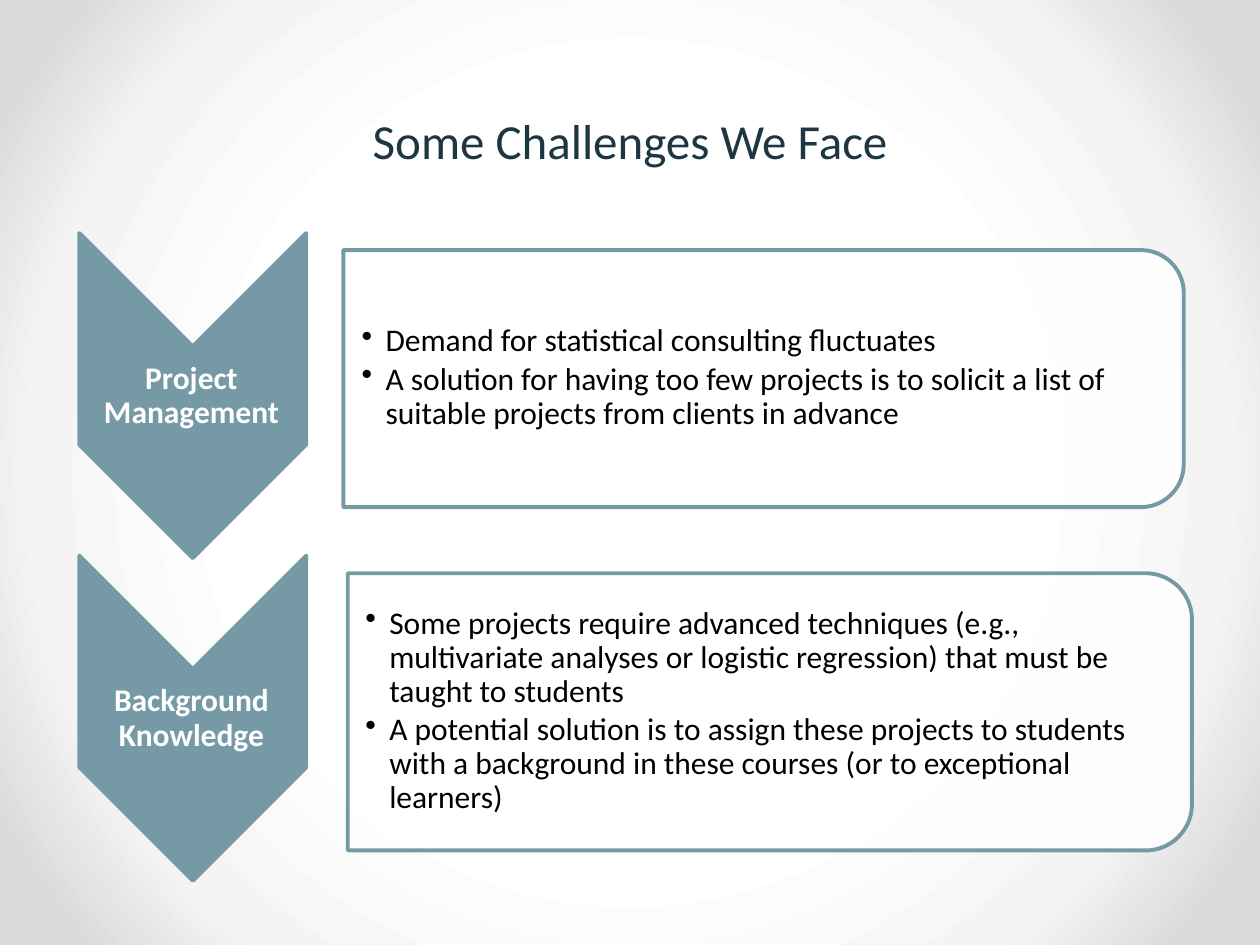
"""Build the slide on challenges in project management and background knowledge."""
from lxml import etree
from pptx import Presentation
from pptx.dml.color import RGBColor
from pptx.enum.shapes import MSO_SHAPE
from pptx.enum.text import MSO_ANCHOR, PP_ALIGN
from pptx.oxml import parse_xml
from pptx.oxml.ns import qn
from pptx.util import Inches, Pt

CHEVRON = MSO_SHAPE.CHEVRON
ROUNDED_TOP = MSO_SHAPE.ROUND_2_SAME_RECTANGLE
MIDDLE = MSO_ANCHOR.MIDDLE
TOP = MSO_ANCHOR.TOP
CENTER = PP_ALIGN.CENTER
LEFT = PP_ALIGN.LEFT
TEAL = "759AA5"
WHITE = "FFFFFF"
NAVY = "1D3641"
BLACK = "000000"
DRAWING_NS = "http://schemas.openxmlformats.org/drawingml/2006/main"


def rgb(value):
    return RGBColor.from_string(value)


def add_text(box, lines, size, color, align, after=0, bold=False, bullet=False, spacing=0.9):
    frame = slide.shapes.add_textbox(*[Inches(v) for v in box]).text_frame
    frame.word_wrap = True
    frame.vertical_anchor = MIDDLE if after else TOP
    if after:
        frame.margin_left = Inches(0.14 if bullet else 0.01)
        frame.margin_top = frame.margin_right = frame.margin_bottom = Inches(0.01)
    for index, line in enumerate(lines):
        paragraph = frame.paragraphs[0] if index == 0 else frame.add_paragraph()
        paragraph.alignment = align
        paragraph.line_spacing = spacing
        paragraph.space_after = Pt(after)
        if bullet:
            paragraph.level = 1
            properties = paragraph._p.get_or_add_pPr()
            properties.set("marL", str(Inches(0.19)))
            properties.set("indent", str(Inches(-0.19)))
            etree.SubElement(properties, qn("a:buChar")).set("char", "•")
        run = paragraph.add_run()
        run.text = line
        run.font.name = "Calibri"
        run.font.size = Pt(size)
        run.font.bold = bold
        run.font.color.rgb = rgb(color)


prs = Presentation()
prs.slide_width = Inches(10)
prs.slide_height = Inches(7.5)
slide = prs.slides.add_slide(prs.slide_layouts[6])

slide.background.fill.gradient()
linear = slide.background._cSld.find(".//" + qn("a:gradFill"))
stops = "".join(
    f'<a:gs pos="{position}000"><a:srgbClr val="{color}"/></a:gs>'
    for position, color in [(50, WHITE), (76, "F4F4F4"), (92, "DADADA")]
)
radial = parse_xml(
    f'<a:gradFill xmlns:a="{DRAWING_NS}" rotWithShape="1"><a:gsLst>{stops}</a:gsLst>'
    '<a:path path="circle"><a:fillToRect l="50000" t="50000" r="50000" b="50000"/>'
    "</a:path></a:gradFill>"
)
linear.getparent().replace(linear, radial)

add_text((0.5, 0.83, 9, 0.57), ["Some Challenges We Face"], 28, NAVY, CENTER, spacing=1.0)

challenges = [
    ("Project Management", 2.24, (5.04, -0.33, 2.04, 6.67), (2.73, 2.08, 6.57, 1.84), [
        "Demand for statistical consulting fluctuates",
        "A solution for having too few projects is to solicit a list of "
        "suitable projects from clients in advance",
    ]),
    ("Background Knowledge", 4.8, (5.01, 2.3, 2.2, 6.7), (2.76, 4.65, 6.6, 1.99), [
        "Some projects require advanced techniques (e.g., multivariate analyses "
        "or logistic regression) that must be taught to students",
        "A potential solution is to assign these projects to students with a "
        "background in these courses (or to exceptional learners)",
    ]),
]

for heading, top, panel_box, points_box, points in challenges:
    for kind, box, color in [(CHEVRON, (0.24, top, 2.58, 1.8), TEAL), (ROUNDED_TOP, panel_box, WHITE)]:
        shape = slide.shapes.add_shape(kind, *[Inches(v) for v in box])
        shape.rotation = 90
        shape.shadow.inherit = False
        shape.fill.solid()
        shape.fill.fore_color.rgb = rgb(color)
        shape.line.color.rgb = rgb(TEAL)
        shape.line.width = Pt(2.25)
        if kind == ROUNDED_TOP:
            fill_color = shape._element.spPr.find(qn("a:solidFill")).find(qn("a:srgbClr"))
            etree.SubElement(fill_color, qn("a:alpha")).set("val", "90000")
    add_text((0.62, top + 0.52, 1.8, 0.77), [heading], 18, WHITE, CENTER, after=6.3, bold=True)
    add_text(points_box, points, 18, BLACK, LEFT, after=2.7, bullet=True)

prs.save("out.pptx")
